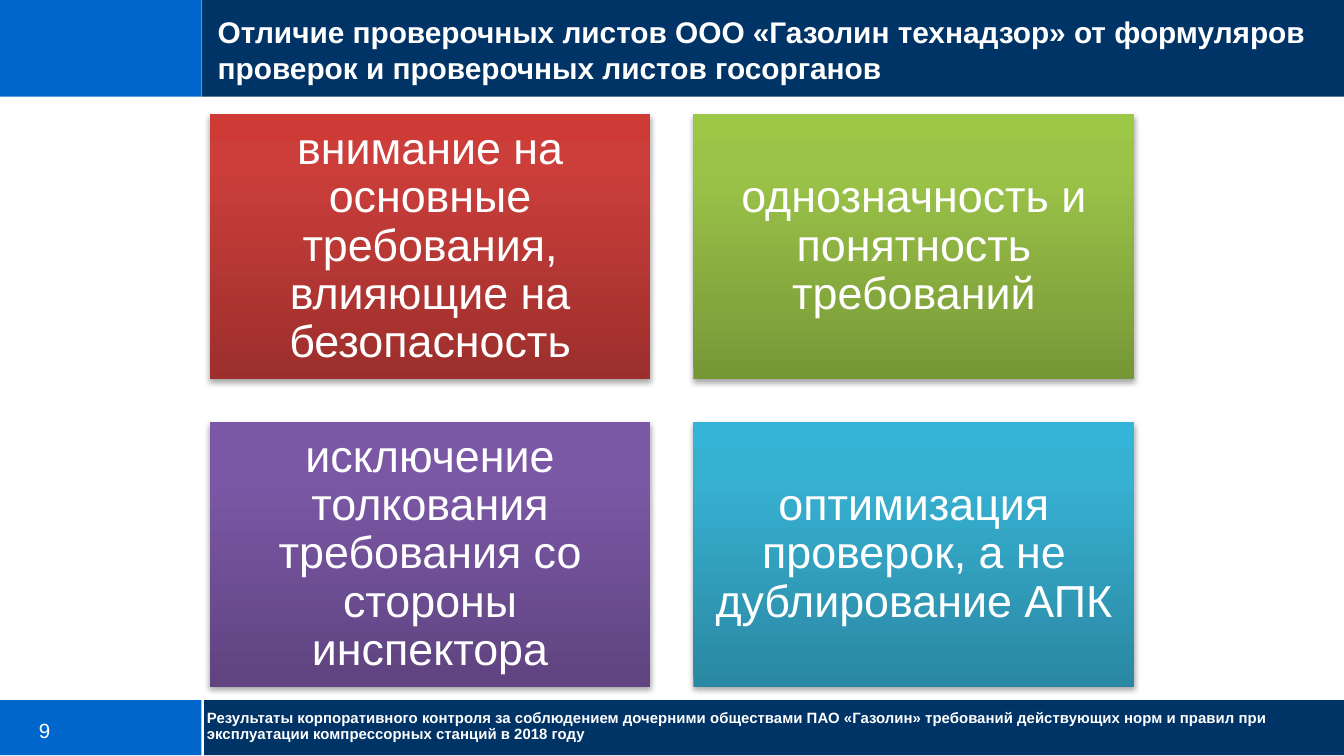
"""Build the slide on how the company's checklists differ from those of state bodies."""
from dataclasses import dataclass

from lxml import etree
from pptx import Presentation
from pptx.dml.color import RGBColor
from pptx.enum.shapes import MSO_SHAPE
from pptx.enum.text import MSO_ANCHOR, MSO_AUTO_SIZE, PP_ALIGN
from pptx.oxml import parse_xml
from pptx.oxml.ns import nsdecls
from pptx.slide import Slide
from pptx.text.text import TextFrame
from pptx.util import Inches, Pt

RECTANGLE = MSO_SHAPE.RECTANGLE
TOP, MIDDLE = MSO_ANCHOR.TOP, MSO_ANCHOR.MIDDLE
LEFT, CENTER = PP_ALIGN.LEFT, PP_ALIGN.CENTER
NO_AUTOFIT = MSO_AUTO_SIZE.NONE

NAVY = RGBColor(0x00, 0x33, 0x66)
BLUE = RGBColor(0x00, 0x66, 0xCC)
WHITE = RGBColor(0xFF, 0xFF, 0xFF)
FONT = "Arial"

SLIDE_WIDTH = 10
SLIDE_HEIGHT = SLIDE_WIDTH * 9 / 16

TITLE = ("Отличие проверочных листов ООО «Газолин технадзор» от формуляров "
         "проверок и проверочных листов госорганов")
FOOTER = ("Результаты корпоративного контроля за соблюдением дочерними обществами "
          "ПАО «Газолин» требований действующих норм и правил при эксплуатации "
          "компрессорных станций в 2018 году")
PAGE_NUMBER = "9"

CARD_LEFT, CARD_TOP = 1.56, 0.85
CARD_WIDTH, CARD_HEIGHT = 3.28, 1.97
CARD_GAP = 0.32
COLUMNS = 2


@dataclass(frozen=True)
class Box:
    left: float
    top: float
    width: float
    height: float

    def lengths(self) -> tuple:
        return tuple(Inches(v) for v in (self.left, self.top, self.width, self.height))


@dataclass(frozen=True)
class Band:
    box: Box
    color: RGBColor


@dataclass(frozen=True)
class Card:
    text: str
    bottom: RGBColor
    middle: RGBColor
    top: RGBColor


BANDS = (
    Band(Box(1.52, 5.21, 8.5, 0.41), NAVY),
    Band(Box(0, 5.21, 1.5, 0.41), BLUE),
    Band(Box(0, 0, 1.5, 0.72), BLUE),
    Band(Box(1.5, 0, 8.5, 0.72), NAVY),
)

CARDS = (
    Card("внимание на основные требования, влияющие на безопасность",
         RGBColor(0x9C, 0x2F, 0x2D), RGBColor(0xCB, 0x3E, 0x3A), RGBColor(0xCE, 0x3B, 0x37)),
    Card("однозначность и понятность требований",
         RGBColor(0x77, 0x97, 0x37), RGBColor(0x9B, 0xC3, 0x48), RGBColor(0x9D, 0xC7, 0x46)),
    Card("исключение толкования требования со стороны инспектора",
         RGBColor(0x5F, 0x44, 0x80), RGBColor(0x7B, 0x58, 0xA6), RGBColor(0x7C, 0x57, 0xA8)),
    Card("оптимизация проверок, а не дублирование АПК",
         RGBColor(0x2A, 0x88, 0xA2), RGBColor(0x37, 0xB1, 0xD2), RGBColor(0x34, 0xB4, 0xD6)),
)


def write(frame: TextFrame, text: str, size: float, margins: tuple[float, float],
          bold: bool = False, align: PP_ALIGN = LEFT, anchor: MSO_ANCHOR = TOP,
          spacing: float = 1.0) -> None:
    frame.word_wrap = True
    frame.auto_size = NO_AUTOFIT
    frame.vertical_anchor = anchor
    frame.margin_left = frame.margin_right = Inches(margins[0])
    frame.margin_top = frame.margin_bottom = Inches(margins[1])
    paragraph = frame.paragraphs[0]
    paragraph.alignment = align
    paragraph.line_spacing = spacing
    run = paragraph.add_run()
    run.text = text
    run.font.name = FONT
    run.font.size = Pt(size)
    run.font.bold = bold
    run.font.color.rgb = WHITE


def draw_band(slide: Slide, band: Band) -> None:
    stripe = slide.shapes.add_shape(RECTANGLE, *band.box.lengths())
    stripe.shadow.inherit = False
    stripe.fill.solid()
    stripe.fill.fore_color.rgb = band.color
    stripe.line.fill.background()


def draw_card(slide: Slide, card: Card, index: int) -> None:
    row, column = divmod(index, COLUMNS)
    box = Box(CARD_LEFT + column * (CARD_WIDTH + CARD_GAP),
              CARD_TOP + row * (CARD_HEIGHT + CARD_GAP), CARD_WIDTH, CARD_HEIGHT)
    tile = slide.shapes.add_shape(RECTANGLE, *box.lengths())
    tile.line.fill.background()
    tile.shadow.inherit = False
    properties = tile._element.spPr
    stops = "".join(
        f'<a:gs pos="{position * 1000}"><a:srgbClr val="{color}"/></a:gs>'
        for position, color in ((0, card.bottom), (80, card.middle), (100, card.top)))
    properties.find("{*}prstGeom").addnext(parse_xml(
        f'<a:gradFill {nsdecls("a")} rotWithShape="1"><a:gsLst>{stops}</a:gsLst>'
        '<a:lin ang="16200000" scaled="0"/></a:gradFill>'))
    effects = properties.find("{*}effectLst")
    shadow = etree.SubElement(
        effects, effects.tag.replace("effectLst", "outerShdw"),
        blurRad=str(Pt(3.1)), dist=str(Pt(1.8)), dir="5400000", rotWithShape="0")
    shadow.append(parse_xml(
        f'<a:srgbClr {nsdecls("a")} val="000000"><a:alpha val="35000"/></a:srgbClr>'))
    write(tile.text_frame, card.text, 24, (0.1, 0.1),
          align=CENTER, anchor=MIDDLE, spacing=0.9)


def draw_label(slide: Slide, box: Box, text: str, size: float,
               margins: tuple[float, float], bold: bool, spacing: float) -> None:
    label = slide.shapes.add_textbox(*box.lengths())
    write(label.text_frame, text, size, margins, bold=bold, spacing=spacing)


def place_title(slide: Slide) -> None:
    title = slide.shapes.title
    title.left, title.top, title.width, title.height = Box(1.54, 0.06, 8.46, 0.71).lengths()
    write(title.text_frame, TITLE, 16, (0.08, 0.04), bold=True)
    slide.shapes._spTree.append(title._element)


def main() -> None:
    presentation = Presentation()
    presentation.slide_width = Inches(SLIDE_WIDTH)
    presentation.slide_height = Inches(SLIDE_HEIGHT)
    slide = presentation.slides.add_slide(presentation.slide_layouts[5])
    for band in BANDS:
        draw_band(slide, band)
    draw_label(slide, Box(0.29, 5.34, 0.53, 0.14), PAGE_NUMBER, 11, (0, 0), False, 1.0)
    draw_label(slide, Box(1.46, 5.25, 8.18, 0.32), FOOTER, 8, (0.08, 0.04), True, 0.9)
    place_title(slide)
    for index, card in enumerate(CARDS):
        draw_card(slide, card, index)
    presentation.save("out.pptx")


if __name__ == "__main__":
    main()
